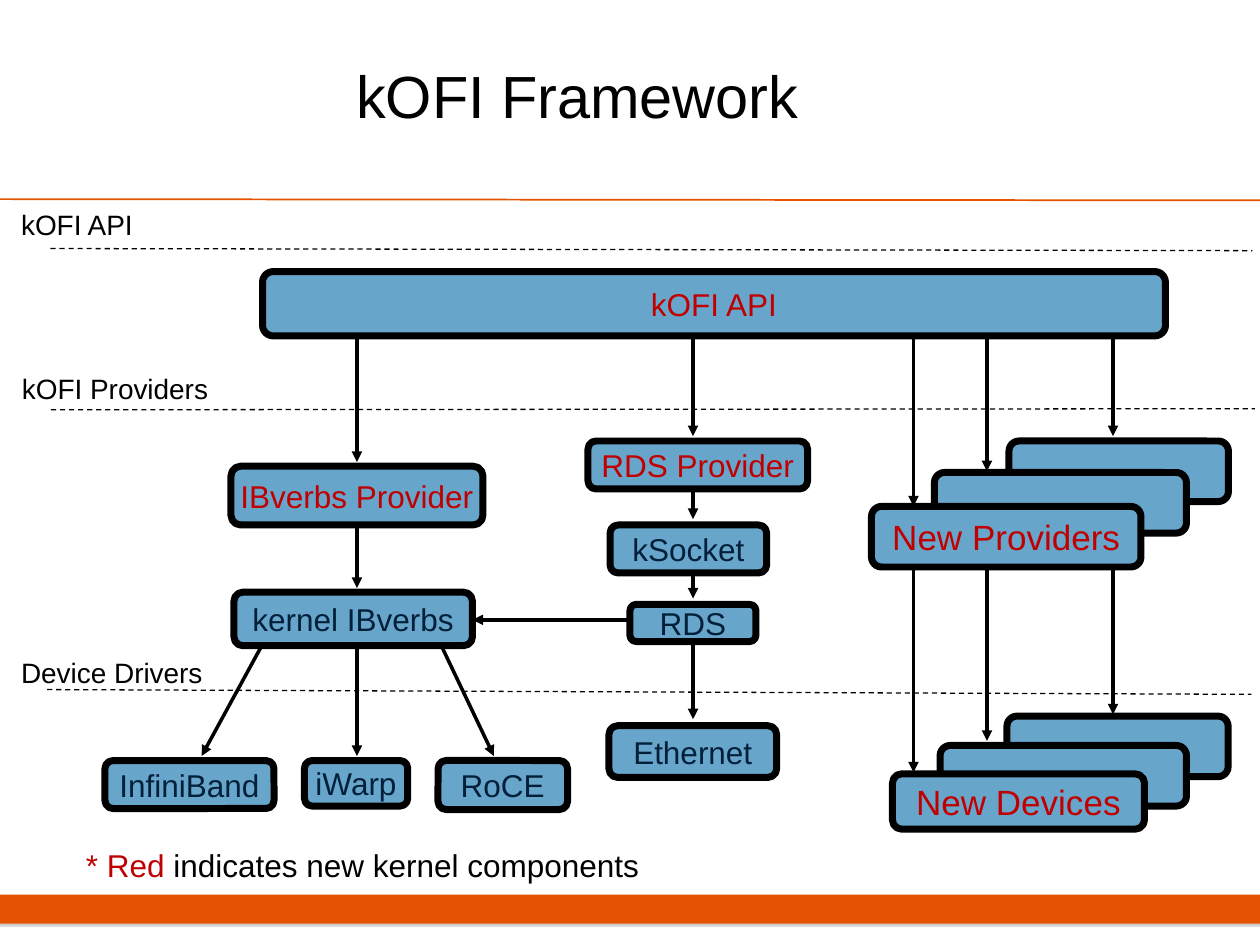
from lxml import etree
from pptx import Presentation
from pptx.dml.color import RGBColor
from pptx.enum import dml, shapes, text
from pptx.oxml import ns
from pptx.util import Pt

ORANGE = RGBColor(0xE5, 0x53, 0x02)
BLUE = RGBColor(0x67, 0xA5, 0xCB)
NAVY = RGBColor(0x02, 0x20, 0x3A)
RED = RGBColor(0xC0, 0x00, 0x00)
BLACK = RGBColor(0, 0, 0)
SHAPE = shapes.MSO_SHAPE


class Diagram:
    """Draws on one slide; all lengths are in points."""
    font = "Arial"

    def __init__(self, slide):
        self.slide = slide

    def style_runs(self, paragraph, size, *colors):
        for run, color in zip(paragraph.runs, colors):
            run.font.name = self.font
            run.font.size = Pt(size)
            run.font.color.rgb = color

    def title(self, words, left, top, width, height):
        heading = self.slide.shapes.title
        heading.left, heading.top = Pt(left), Pt(top)
        heading.width, heading.height = Pt(width), Pt(height)
        frame = heading.text_frame
        frame.text = words
        frame.vertical_anchor = text.MSO_ANCHOR.MIDDLE
        frame.paragraphs[0].alignment = text.PP_ALIGN.CENTER
        self.style_runs(frame.paragraphs[0], 34, BLACK)

    def shape(self, kind, left, top, width, height):
        item = self.slide.shapes.add_shape(
            kind, Pt(left), Pt(top), Pt(width), Pt(height))
        item.shadow.inherit = False
        return item

    def footer_bar(self, left, top, width, height):
        bar = self.shape(SHAPE.RECTANGLE, left, top, width, height)
        bar.fill.solid()
        bar.fill.fore_color.rgb = ORANGE
        bar.line.fill.background()
        effects = bar._element.spPr.find(ns.qn("a:effectLst"))
        shadow = etree.SubElement(effects, ns.qn("a:outerShdw"), blurRad="0",
                                  dist=str(Pt(1.8)), dir="5400000")
        gray = etree.SubElement(shadow, ns.qn("a:srgbClr"), val="808080")
        etree.SubElement(gray, ns.qn("a:alpha"), val="35000")

    def box(self, words, left, top, width, height, color=NAVY, size=18):
        item = self.shape(SHAPE.ROUNDED_RECTANGLE, left, top, width, height)
        item.fill.solid()
        item.fill.fore_color.rgb = BLUE
        item.line.color.rgb = BLACK
        item.line.width = Pt(4)
        if words:
            frame = item.text_frame
            frame.text = words
            frame.word_wrap = False
            frame.vertical_anchor = text.MSO_ANCHOR.MIDDLE
            frame.paragraphs[0].alignment = text.PP_ALIGN.CENTER
            self.style_runs(frame.paragraphs[0], size, color)

    def layer_label(self, words, left, top, width, height, adjustments):
        """Label whose callout line is the dashed border of its layer."""
        label = self.shape(SHAPE.LINE_CALLOUT_1_NO_BORDER, left, top, width, height)
        for index, value in enumerate(adjustments):
            label.adjustments[index] = value
        label.fill.background()
        label.line.color.rgb = BLACK
        label.line.width = Pt(0.75)
        label.line.dash_style = dml.MSO_LINE.DASH
        frame = label.text_frame
        frame.text = words
        frame.vertical_anchor = text.MSO_ANCHOR.MIDDLE
        frame.paragraphs[0].alignment = text.PP_ALIGN.LEFT
        self.style_runs(frame.paragraphs[0], 16, BLACK)

    def line(self, x1, y1, x2, y2, color=BLACK, width=2.0):
        connector = self.slide.shapes.add_connector(
            shapes.MSO_CONNECTOR.STRAIGHT, Pt(x1), Pt(y1), Pt(x2), Pt(y2))
        connector.line.color.rgb = color
        connector.line.width = Pt(width)
        etree.SubElement(connector._element.spPr, ns.qn("a:effectLst"))
        return connector

    def arrow(self, x1, y1, x2, y2):
        stroke = self.line(x1, y1, x2, y2).line._get_or_add_ln()
        etree.SubElement(stroke, ns.qn("a:tailEnd"), type="triangle")

    def note(self, parts, left, top, width, height):
        frame = self.slide.shapes.add_textbox(
            Pt(left), Pt(top), Pt(width), Pt(height)).text_frame
        frame.word_wrap = True
        paragraph = frame.paragraphs[0]
        for words, _ in parts:
            paragraph.add_run().text = words
        self.style_runs(paragraph, 18, *(color for _, color in parts))


LAYERS = [
    ("kOFI API", 5, 120.2, 97.9, 15.8, (1.384, 0.244, 1.461, 7.258)),
    ("kOFI Providers", 5.5, 216, 124.6, 12.2, (1.495, 0.19, 1.443, 5.711)),
    ("Device Drivers", 5, 378, 132.5, 12.2, (1.32, 0.166, 1.542, 5.36)),
]
IBVERBS_X, RDS_X = 204, 396
NEW_X = (522, 564, 636)
API_BOTTOM, KERNEL_BOTTOM, NEW_BOTTOM, DEVICE_TOP = 192, 368.6, 324, 432
VERTICAL_ARROWS = [
    (IBVERBS_X, [(API_BOTTOM, 264), (300, 336), (KERNEL_BOTTOM, DEVICE_TOP)]),
    (RDS_X, [(API_BOTTOM, 249.2), (279.4, 296.6), (327.6, 342), (368.6, 411)]),
    (NEW_X[0], [(API_BOTTOM, 289.4), (NEW_BOTTOM, 441.4)]),
    (NEW_X[1], [(API_BOTTOM, 269.3), (NEW_BOTTOM, 423.4)]),
    (NEW_X[2], [(API_BOTTOM, 249.2), (NEW_BOTTOM, 408.2)]),
]
SLANTED_ARROWS = [
    (360, 354.2, 270, 354.2),
    (149.8, KERNEL_BOTTOM, 115.2, DEVICE_TOP),
    (252, KERNEL_BOTTOM, 282.2, DEVICE_TOP),
]
# From back to front
BOXES = [
    ("kOFI API", 150, 155.2, 516, 36.8, RED),
    ("IBverbs Provider", 132, 266.4, 144, 33.6, RED),
    ("kernel IBverbs", 133.7, 338.4, 136.3, 30.6),
    ("InfiniBand", 60, 434.6, 96.6, 27.4),
    ("iWarp", 174, 434.6, 59, 26),
    ("RoCE", 250.3, 434.6, 74, 28),
    ("RDS Provider", 336, 252, 125.5, 27.4, RED),
    ("kSocket", 348.6, 300, 89.5, 27.4),
    ("RDS", 360, 345.4, 72, 21.2),
    ("Ethernet", 348, 414.7, 95.8, 29.5),
    ("", 576.6, 252, 125.4, 34.6),
    ("", 534, 270, 144, 34.6),
    ("New Providers", 498, 289.4, 154, 34.6, RED, 20),
    ("", 575.4, 409.2, 126.4, 34.6),
    ("", 537.2, 426, 140.8, 34.6),
    ("New Devices", 510, 442.2, 144, 31.6, RED, 20),
]


def main():
    deck = Presentation()
    deck.slide_width, deck.slide_height = Pt(720), Pt(540)
    diagram = Diagram(deck.slides.add_slide(deck.slide_layouts[5]))

    diagram.footer_bar(0, 511.2, 720, 16.6)
    diagram.line(0, 113.8, 720, 114.5, ORANGE, 1)
    diagram.title("kOFI Framework", 36, 18, 588, 72)
    for layer in LAYERS:
        diagram.layer_label(*layer)
    for x, spans in VERTICAL_ARROWS:
        for start, end in spans:
            diagram.arrow(x, start, x, end)
    for ends in SLANTED_ARROWS:
        diagram.arrow(*ends)
    for box in BOXES:
        diagram.box(*box)
    diagram.note([("* Red", RED), (" indicates new kernel components", BLACK)],
                 42, 480, 372, 29)
    deck.save("out.pptx")


if __name__ == "__main__":
    main()
